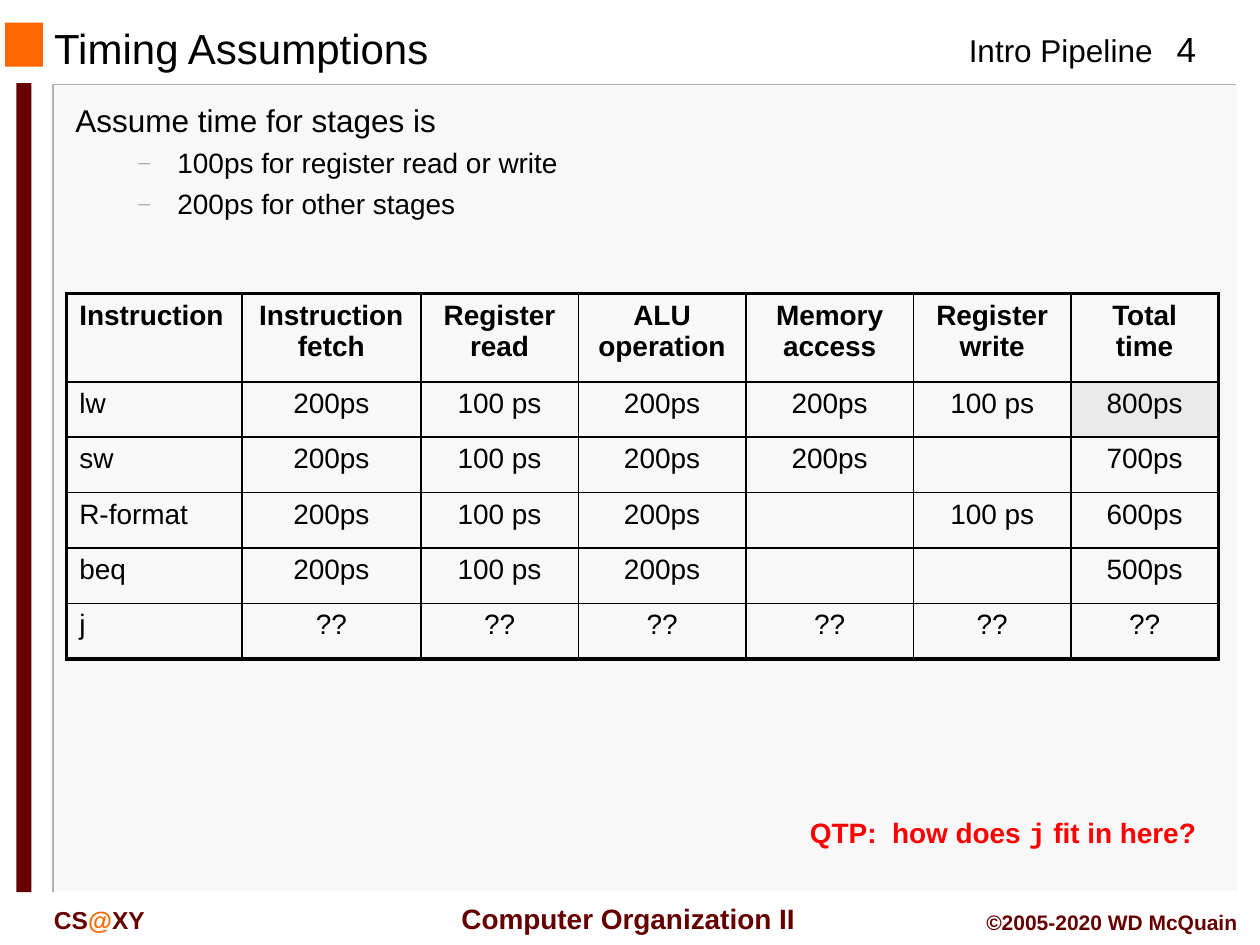
from pptx import Presentation
from pptx.dml.color import RGBColor
from pptx.enum.shapes import MSO_SHAPE
from pptx.enum.text import MSO_ANCHOR, PP_ALIGN
from pptx.oxml import parse_xml
from pptx.oxml.ns import nsdecls
from pptx.util import Inches, Pt

BLACK, MAROON, ORANGE, RED = "000000", "660000", "FF6600", "FF0000"
GRAY, WHITE = "B2B2B2", "FFFFFF"
LEFT, MID, RIGHT = PP_ALIGN.LEFT, PP_ALIGN.CENTER, PP_ALIGN.RIGHT

COLS = [1.39, 1.42, 1.25, 1.33, 1.33, 1.25, 1.17]
ROWS = [0.7] + [0.44] * 5
READ = ["200ps", "100 ps", "200ps"]
CELLS = [
    ["Instruction", "Instruction fetch", "Register read", "ALU operation",
     "Memory access", "Register write", "Total time"],
    ["lw", *READ, "200ps", "100 ps", "800ps"],
    ["sw", *READ, "200ps", "", "700ps"],
    ["R-format", *READ, "", "100 ps", "600ps"],
    ["beq", *READ, "", "", "500ps"],
    ["j"] + ["??"] * 6,
]


def color(code):
    return RGBColor.from_string(code)


def style(run, size, code=BLACK, bold=False, face="Arial"):
    font = run.font
    font.name, font.size, font.bold = face, Pt(size), bold
    font.color.rgb = color(code)


def add_bar(slide, box, code):
    bar = slide.shapes.add_shape(MSO_SHAPE.RECTANGLE, *map(Inches, box))
    bar.shadow.inherit = False
    bar.fill.solid()
    bar.fill.fore_color.rgb = color(code)
    bar.line.fill.background()


def add_edge(slide, points, code):
    start, *rest = [(Inches(x), Inches(y)) for x, y in points]
    pen = slide.shapes.build_freeform(*start)
    pen.add_line_segments(rest, close=False)
    edge = pen.convert_to_shape()
    edge.shadow.inherit = False
    edge.fill.background()
    edge.line.color.rgb = color(code)
    edge.line.width = Pt(1)


def add_text(slide, box, parts, size, align=LEFT, bold=False, wrap=True):
    frame = slide.shapes.add_textbox(*map(Inches, box)).text_frame
    frame.word_wrap = wrap
    para = frame.paragraphs[0]
    para.alignment = align
    for text, code, face in parts:
        run = para.add_run()
        run.text = text
        style(run, size, code, bold, face)


def add_title(slide, text):
    title = slide.shapes.title
    title.left, title.top = Inches(0.33), Inches(0.19)
    title.width, title.height = Inches(6.33), Inches(0.38)
    frame = title.text_frame
    frame.text = text
    frame.vertical_anchor = MSO_ANCHOR.MIDDLE
    para = frame.paragraphs[0]
    para.alignment = LEFT
    style(para.runs[0], 24)


def add_bullet(para):
    props = para._p.get_or_add_pPr()
    props.set("marL", str(Inches(0.81)))
    props.set("indent", str(Inches(-0.31)))
    for tag in (f'<a:buClr {nsdecls("a")}><a:srgbClr val="{GRAY}"/></a:buClr>',
                f'<a:buSzPct {nsdecls("a")} val="75000"/>',
                f'<a:buFont {nsdecls("a")} typeface="Arial"/>',
                f'<a:buChar {nsdecls("a")} char="–"/>'):
        props.append(parse_xml(tag))


def add_body(slide, box, head, items):
    frame = slide.shapes.add_textbox(*map(Inches, box)).text_frame
    frame.word_wrap = True
    frame.text = "\n".join([head, *items])
    for i, para in enumerate(frame.paragraphs):
        para.space_before = Pt(4)
        style(para.runs[0], 16 if i else 18)
        if i:
            para.level = 1
            add_bullet(para)


def set_edges(cell, widths):
    props = cell._tc.get_or_add_tcPr()
    for side, width in zip("LRTB", widths):
        props.append(parse_xml(
            f'<a:ln{side} {nsdecls("a")} w="{Pt(width)}"><a:solidFill>'
            f'<a:srgbClr val="{BLACK}"/></a:solidFill></a:ln{side}>'))


def add_grid(slide, left, top):
    table = slide.shapes.add_table(
        len(ROWS), len(COLS), Inches(left), Inches(top),
        Inches(sum(COLS)), Inches(sum(ROWS))).table
    table.first_row = table.horz_banding = False
    for col, width in zip(table.columns, COLS):
        col.width = Inches(width)
    for row, height in zip(table.rows, ROWS):
        row.height = Inches(height)
    across = [2.25] + [1] * (len(COLS) - 1) + [2.25]
    down = [2.25, 1.5] + [1] * (len(ROWS) - 2) + [2.25]
    for r, line in enumerate(CELLS):
        for c, text in enumerate(line):
            cell = table.cell(r, c)
            set_edges(cell, (*across[c:c + 2], *down[r:r + 2]))
            cell.fill.background()
            cell.text = text
            para = cell.text_frame.paragraphs[0]
            para.alignment = MID if c else LEFT
            para.font.size = Pt(16)
            for run in para.runs:
                style(run, 16, bold=r == 0)
    total = table.cell(1, len(COLS) - 1)
    total.fill.solid()
    total.fill.fore_color.rgb = color("EAEAEA")


def main():
    deck = Presentation()
    deck.slide_width, deck.slide_height = Inches(10), Inches(7.5)
    slide = deck.slides.add_slide(deck.slide_layouts[5])

    add_bar(slide, (0.43, 0.67, 9.4, 6.41), "F8F8F8")
    add_edge(slide, [(9.81, 0.67), (0.42, 0.67), (0.42, 7.08)], GRAY)
    add_edge(slide, [(9.83, 0.67), (9.83, 7.08), (0.44, 7.08)], WHITE)
    add_bar(slide, (0.04, 0.18, 0.3, 0.35), ORANGE)
    add_bar(slide, (0.13, 0.66, 0.12, 6.42), MAROON)

    add_text(slide, (7.59, 0.2, 1.68, 0.4),
             [("Intro Pipeline", BLACK, "Arial")], 18, wrap=False)
    add_text(slide, (9.08, 0.17, 0.67, 0.43), [("4", BLACK, "Arial")], 20, MID)
    add_text(slide, (3.48, 7.11, 2.95, 0.37),
             [(" Computer Organization II", MAROON, "Arial")],
             16, MID, True, False)
    add_text(slide, (0.33, 7.13, 1.5, 0.33),
             [("CS", MAROON, "Arial"), ("@", ORANGE, "Arial"),
              ("XY", MAROON, "Arial")], 14, bold=True)
    add_text(slide, (7.42, 7.17, 2.5, 0.3),
             [("©2005-2020 WD McQuain", MAROON, "Arial")], 12, RIGHT, True)

    add_title(slide, "Timing Assumptions")
    add_body(slide, (0.5, 0.75, 9.25, 1.04), "Assume time for stages is",
             ["100ps for register read or write", "200ps for other stages"])
    add_grid(slide, 0.53, 2.33)
    add_text(slide, (6.33, 6.42, 3.42, 0.37),
             [("QTP:  how does ", RED, "Arial"), ("j", RED, "Courier New"),
              (" fit in here?", RED, "Arial")], 16, bold=True)
    deck.save("out.pptx")


if __name__ == "__main__":
    main()
